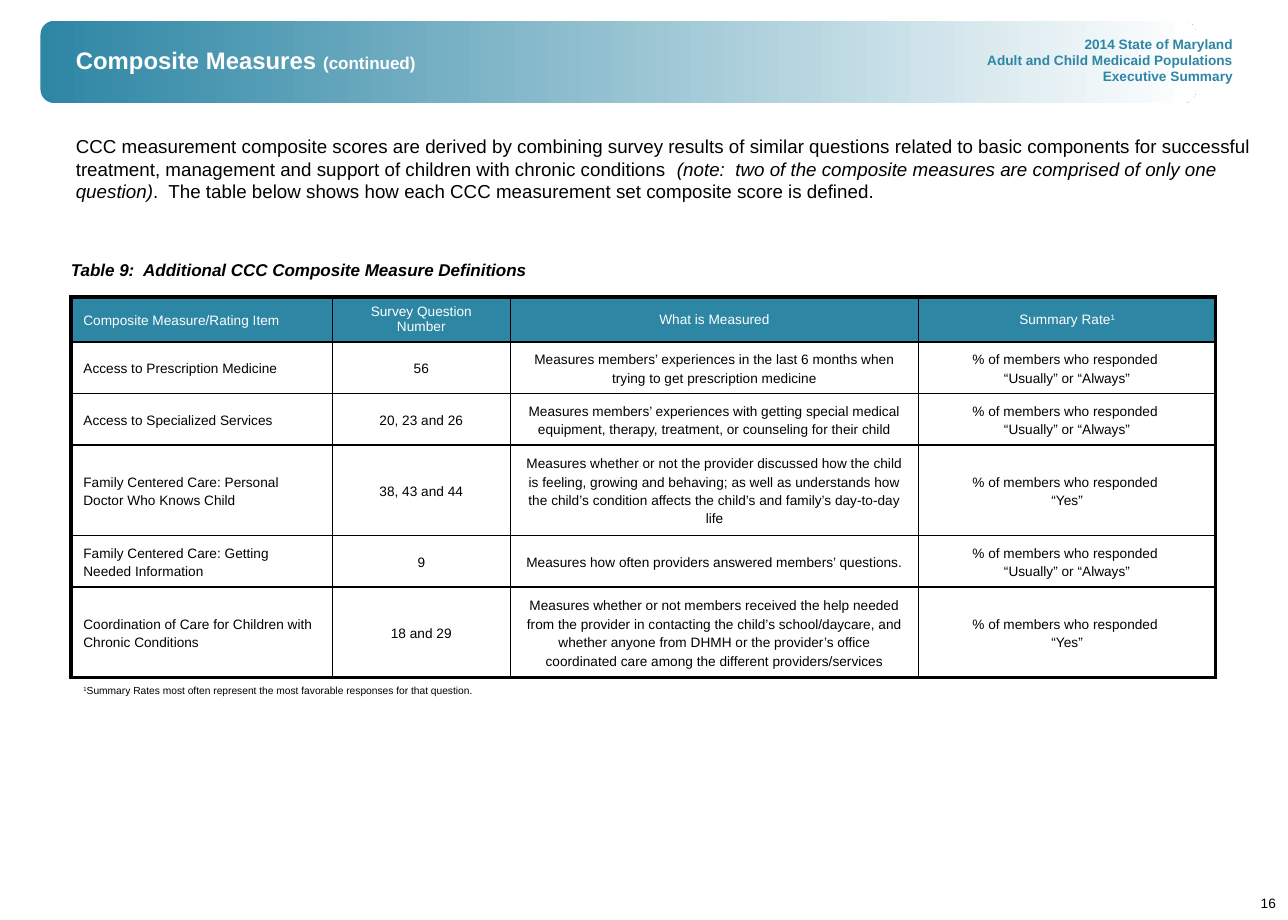
from lxml import etree
from pptx import Presentation
from pptx.dml.color import RGBColor
from pptx.enum.shapes import MSO_SHAPE
from pptx.enum.text import MSO_ANCHOR, PP_ALIGN
from pptx.oxml.ns import qn
from pptx.util import Inches, Pt

LEFT, CENTER, RIGHT = PP_ALIGN.LEFT, PP_ALIGN.CENTER, PP_ALIGN.RIGHT
TOP, MIDDLE = MSO_ANCHOR.TOP, MSO_ANCHOR.MIDDLE
ROUNDED = MSO_SHAPE.ROUNDED_RECTANGLE

THEME = {
    "font": "Arial",
    "teal": RGBColor.from_string("2D86A4"),
    "white": RGBColor.from_string("FFFFFF"),
    "black": RGBColor.from_string("000000"),
    "title": Pt(14), "intro": Pt(11), "caption": Pt(10),
    "small": Pt(8), "footnote": Pt(6),
    "thin": Pt(1), "thick": Pt(2.25),
}

deck = Presentation()
deck.slide_width, deck.slide_height = Inches(10.5), Inches(7.5)
slide = deck.slides.add_slide(deck.slide_layouts[6])
COLUMN = deck.slide_width / 105
ROW = deck.slide_height / 75


def write(frame, paragraphs, size, color, align=LEFT, bold=None, spacing=None):
    """Fill a text frame; each paragraph is a list of (text, run settings) pairs."""
    frame.word_wrap = True
    for index, runs in enumerate(paragraphs):
        para = frame.add_paragraph() if index else frame.paragraphs[0]
        para.alignment, para.line_spacing = align, spacing
        para.font.name, para.font.size = THEME["font"], THEME[size]
        para.font.color.rgb, para.font.bold = THEME[color], bold
        for text, settings in runs:
            for number, line in enumerate(text.split("\n")):
                if number:
                    para.add_line_break()
                span = para.add_run()
                span.text = line
                span.font.italic = settings.get("italic")
                if "size" in settings:
                    span.font.size = THEME[settings["size"]]
                if "raised" in settings:
                    span._r.get_or_add_rPr().set("baseline", "30000")


def set_border(cell, side, width):
    """Draw one side (L, R, T or B) of a cell, or clear it when width is None."""
    properties = cell._tc.get_or_add_tcPr()
    line = etree.SubElement(properties, qn(f"a:ln{side}"))
    if width is None:
        etree.SubElement(line, qn("a:noFill"))
        return
    line.set("w", str(THEME[width]))
    fill = etree.SubElement(line, qn("a:solidFill"))
    etree.SubElement(fill, qn("a:srgbClr")).set("val", str(THEME["black"]))


# Header band
band = slide.shapes.add_shape(
    ROUNDED, *map(int, (3.3 * COLUMN, 1.7 * ROW, 94.2 * COLUMN, 6.7 * ROW)))
band.shadow.inherit = False
band.line.fill.background()
band.fill.gradient()
band.fill.gradient_angle = 0
for stop, position, color in zip(band.fill.gradient_stops, (0, 1), ("teal", "white")):
    stop.position, stop.color.rgb = position, THEME[color]

# Text boxes: left, top, width, height in grid units, anchor, paragraphs, style
raised, italic = {"raised": True}, {"italic": True}
report_lines = ["2014 State of Maryland", "Adult and Child Medicaid Populations",
                "Executive Summary"]
intro = [
    ("CCC measurement composite scores are derived by combining survey results of "
     "similar questions related to basic components for successful treatment, "
     "management and support of children with chronic conditions  ", {}),
    ("(note:  two of the composite measures are comprised of only one question)", italic),
    (".  The table below shows how each CCC measurement set composite score is "
     "defined.", {}),
]
text_boxes = [
    (99, 72.5, 6, 2.3, TOP, [[("16", {})]],
     dict(size="small", color="black", align=RIGHT)),
    (77.5, 2.4, 24, 5, TOP, [[(line, {})] for line in report_lines],
     dict(size="small", color="teal", align=RIGHT, bold=True)),
    (5.2, 3, 94.5, 3.7, MIDDLE,
     [[("Composite Measures ", {}), ("(continued)", {"size": "caption"})]],
     dict(size="title", color="white", bold=True)),
    (5.2, 10.5, 98, 6.5, TOP, [intro], dict(size="intro", color="black")),
    (4.8, 20.7, 41, 2.7, TOP,
     [[("Table 9:  Additional CCC Composite Measure Definitions", italic)]],
     dict(size="caption", color="black", bold=True)),
]
for left, top, width, height, anchor, paragraphs, style in text_boxes:
    box = slide.shapes.add_textbox(
        *map(int, (left * COLUMN, top * ROW, width * COLUMN, height * ROW)))
    box.text_frame.vertical_anchor = anchor
    write(box.text_frame, paragraphs, **style)

# Measure definitions
often = "% of members who responded \n“Usually” or “Always”"
yes = "% of members who responded \n“Yes”"
measures = [
    ("Access to Prescription Medicine", "56",
     "Measures members’ experiences in the last 6 months when trying to get "
     "prescription medicine", often),
    ("Access to Specialized Services", "20, 23 and 26",
     "Measures members’ experiences with getting special medical equipment, therapy, "
     "treatment, or counseling for their child", often),
    ("Family Centered Care: Personal Doctor Who Knows Child", "38, 43 and 44",
     "Measures whether or not the provider discussed how the child is feeling, growing "
     "and behaving; as well as understands how the child’s condition affects the "
     "child’s and family’s day-to-day life", yes),
    ("Family Centered Care: Getting Needed Information", "9",
     "Measures how often providers answered members’ questions.", often),
    ("Coordination of Care for Children with Chronic Conditions", "18 and 29",
     "Measures whether or not members received the help needed from the provider in "
     "contacting the child’s school/daycare, and whether anyone from DHMH or the "
     "provider’s office coordinated care among the different providers/services", yes),
]
headings = ["Composite Measure/Rating Item", "Survey Question Number",
            "What is Measured", "Summary Rate"]
column_widths = [21.3, 14.5, 33.3, 24.2]
row_heights = [2.7, 4.2, 4.2, 7.3, 4.2, 7.3, 2.2]
last_column, footnote_row = len(column_widths) - 1, len(row_heights) - 1

table = slide.shapes.add_table(
    len(row_heights), len(column_widths),
    *map(int, (5.8 * COLUMN, 24.2 * ROW, sum(column_widths) * COLUMN,
               sum(row_heights) * ROW))).table
table.first_row = table.horz_banding = False
for column, width in zip(table.columns, column_widths):
    column.width = int(width * COLUMN)
for row, height in zip(table.rows, row_heights):
    row.height = int(height * ROW)

for row_index, texts in enumerate([headings, *measures]):
    is_heading = row_index == 0
    for column_index, text in enumerate(texts):
        cell = table.cell(row_index, column_index)
        cell.vertical_anchor = MIDDLE
        runs = [(text, {})]
        if is_heading and column_index == last_column:
            runs.append(("1", raised))
        write(cell.text_frame, [runs], "small", "white" if is_heading else "black",
              align=CENTER if column_index else LEFT,
              spacing=None if is_heading and column_index else 1.2)
        outer_sides = {"L": column_index == 0, "R": column_index == last_column,
                       "T": is_heading, "B": row_index == footnote_row - 1}
        for side, is_outer in outer_sides.items():
            set_border(cell, side, "thick" if is_outer else "thin")
        if is_heading:
            cell.fill.solid()
            cell.fill.fore_color.rgb = THEME["teal"]
        else:
            cell.fill.background()

# Footnote below the ruled rows
footnote = table.cell(footnote_row, 0)
footnote.merge(table.cell(footnote_row, last_column - 1))
write(footnote.text_frame, [[
    ("1", raised),
    ("Summary Rates most often represent the most favorable responses for that "
     "question.", {})]], "footnote", "black", spacing=1.2)
for cell in table.rows[footnote_row].cells:
    for side, width in zip("LRTB", (None, None, "thick", None)):
        set_border(cell, side, width)
    cell.fill.background()
    if not cell.text_frame.text:
        end = etree.SubElement(cell.text_frame.paragraphs[0]._p, qn("a:endParaRPr"))
        end.set("sz", str(int(THEME["footnote"].pt * 100)))

deck.save("out.pptx")
